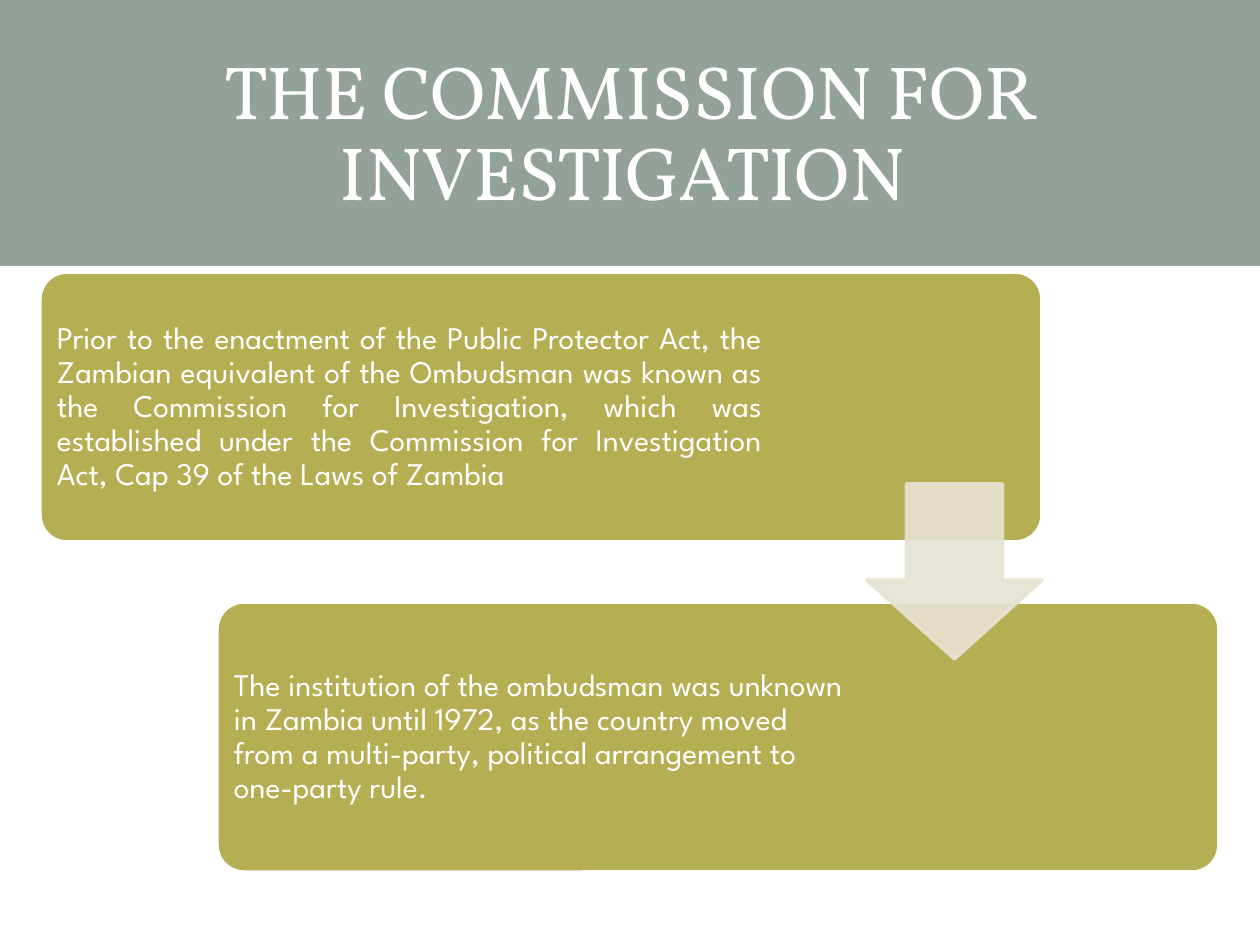
from lxml import etree
from pptx import Presentation, util as u
from pptx.dml.color import RGBColor
from pptx.enum import shapes, text
from pptx.oxml.ns import qn

SLIDE_W, SLIDE_H = 1260, 945
STEP_W, STEP_H = 1002, 270
WHITE, SAGE, OLIVE, CREAM = "FFFFFF", "93A299", "B5AE53", "E5E3D1"
ALIGN = text.PP_ALIGN


def px(length):
    return u.Emu(round(length * 914400 / 126))


def paint(fill, color, opacity=100):
    fill.solid()
    fill.fore_color.rgb = RGBColor.from_string(color)
    if opacity < 100:
        color_node = fill._xPr.find(qn("a:solidFill"))[0]
        etree.SubElement(color_node, qn("a:alpha"), val=str(opacity * 1000))


def add_block(slide, kind, box, color, outline=None, opacity=100):
    block = slide.shapes.add_shape(kind, *map(px, box))
    block.shadow.inherit = False
    paint(block.fill, color, opacity)
    if outline:
        block.line.width = u.Pt(2)
        paint(block.line.fill, outline, opacity)
    else:
        block.line.fill.background()
    return block


def add_words(slide, box, words, font, size, align, inset):
    frame = slide.shapes.add_textbox(*map(px, box)).text_frame
    frame.word_wrap = True
    frame.vertical_anchor = text.MSO_ANCHOR.MIDDLE
    frame.margin_left = frame.margin_right = px(inset[0])
    frame.margin_top = frame.margin_bottom = px(inset[1])
    paragraph = frame.paragraphs[0]
    paragraph.alignment = align
    paragraph.line_spacing = 0.9
    run = paragraph.add_run()
    run.text = words
    run.font.name = font
    run.font.size = u.Pt(size)
    run.font.color.rgb = RGBColor.from_string(WHITE)


def add_header(slide, x, y, w, h):
    add_block(slide, shapes.MSO_SHAPE.RECTANGLE, (x, y, w, h), SAGE)
    add_words(slide, (x + 40, y + 44, w - 80, 183),
              "THE COMMISSION FOR INVESTIGATION ",
              "Vollkorn", 43, ALIGN.CENTER, (13, 6))


def add_step(slide, x, y, words, words_w, align):
    card = add_block(slide, shapes.MSO_SHAPE.ROUNDED_RECTANGLE,
                     (x, y, STEP_W, STEP_H), OLIVE, WHITE)
    card.adjustments[0] = 0.1
    add_words(slide, (x + 8, y + 8, words_w, STEP_H - 16), words,
              "League Spartan", 18, align, (9, 9))


def add_step_arrow(slide, x, y, size):
    arrow = add_block(slide, shapes.MSO_SHAPE.DOWN_ARROW,
                      (x, y, size, size), CREAM, CREAM, opacity=90)
    arrow.adjustments[0] = 0.55
    arrow.adjustments[1] = 0.45


def main():
    deck = Presentation()
    deck.slide_width, deck.slide_height = px(SLIDE_W), px(SLIDE_H)
    slide = deck.slides.add_slide(deck.slide_layouts[6])
    add_header(slide, 0, 0, SLIDE_W, 266)
    add_step(slide, 40, 272,
             "Prior to the enactment of the Public Protector Act, the Zambian "
             "equivalent of the Ombudsman was known as the Commission for "
             "Investigation, which was established under the Commission for "
             "Investigation Act, Cap 39 of the Laws of Zambia",
             723, ALIGN.JUSTIFY)
    add_step(slide, 217, 602,
             "The institution of the ombudsman was unknown in Zambia until "
             "1972, as the country moved from a multi-party, political "
             "arrangement to one-party rule.",
             634, ALIGN.LEFT)
    add_step_arrow(slide, 867, 484, 175)
    deck.save("out.pptx")


if __name__ == "__main__":
    main()
